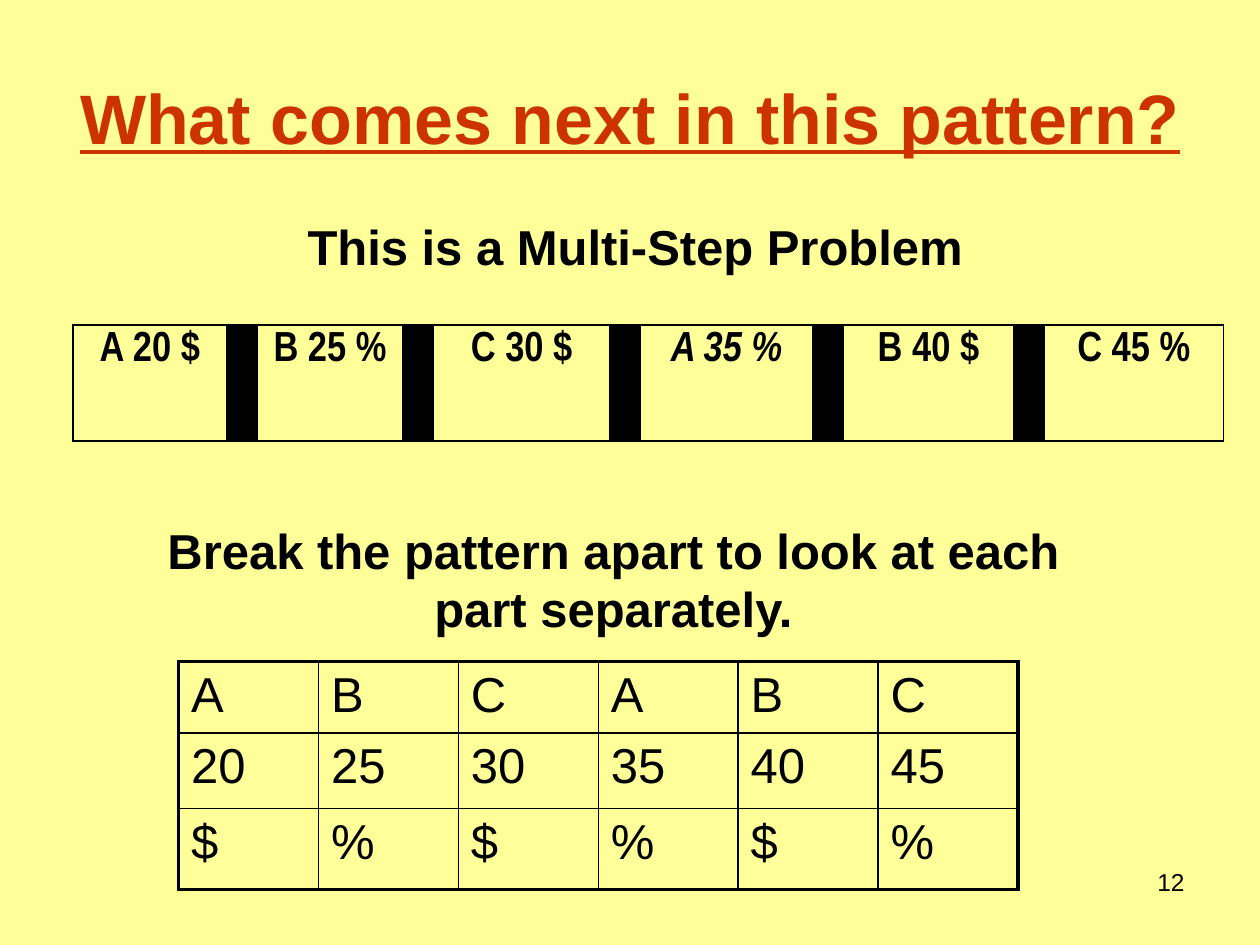
from lxml.etree import SubElement
from pptx import Presentation
from pptx.dml.color import RGBColor
from pptx.enum.text import MSO_ANCHOR, PP_ALIGN
from pptx.oxml.ns import qn
from pptx.util import Cm, Pt

PALE_YELLOW = RGBColor(0xFF, 0xFF, 0x99)
BRICK_RED = RGBColor(0xCC, 0x33, 0x00)
BLACK = RGBColor(0x00, 0x00, 0x00)

LETTERS = ["A", "B", "C", "A", "B", "C"]
NUMBERS = ["20", "25", "30", "35", "40", "45"]
SYMBOLS = ["$", "%", "$", "%", "$", "%"]

THIN, THICK = 1, 2.25


def write(frame, text, size, align=PP_ALIGN.CENTER, font="Arial", color=BLACK,
          bold=False, italic=False, underline=False):
    paragraph = frame.paragraphs[0]
    paragraph.alignment = align
    run = paragraph.add_run()
    run.text = text
    run.font.name = font
    run.font.size = Pt(size)
    run.font.color.rgb = color
    run.font.bold = bold
    run.font.italic = italic
    run.font.underline = underline


def add_text(slide, left, top, width, height, text, size,
             anchor=MSO_ANCHOR.TOP, **style):
    box = slide.shapes.add_textbox(Cm(left), Cm(top), Cm(width), Cm(height))
    box.text_frame.word_wrap = True
    box.text_frame.vertical_anchor = anchor
    write(box.text_frame, text, size, **style)


def add_grid(slide, left, top, widths, heights):
    grid = slide.shapes.add_table(
        len(heights), len(widths), Cm(left), Cm(top),
        Cm(sum(widths)), Cm(sum(heights))).table
    grid.first_row = False
    grid.horz_banding = False
    for column, width in zip(grid.columns, widths):
        column.width = Cm(width)
    for row, height in zip(grid.rows, heights):
        row.height = Cm(height)
    return grid


def style_cell(cell, left=THIN, right=THIN, top=THIN, bottom=THIN, color=None):
    properties = cell._tc.get_or_add_tcPr()
    for side, points in zip("LRTB", (left, right, top, bottom)):
        line = SubElement(properties, qn(f"a:ln{side}"), w=str(Pt(points)))
        fill = SubElement(line, qn("a:solidFill"))
        SubElement(fill, qn("a:srgbClr"), val=str(BLACK))
    if color is None:
        cell.fill.background()
    else:
        cell.fill.solid()
        cell.fill.fore_color.rgb = color


def add_pattern_strip(slide):
    term_widths = [3.1, 2.95, 3.56, 3.48, 3.45, 3.61]
    divider = 0.58
    widths = [term_widths[0]]
    for width in term_widths[1:]:
        widths += [divider, width]
    strip = add_grid(slide, 1.47, 6.55, widths, [2.34])

    # Terms sit in even columns, black dividers in odd ones
    for column in range(len(widths)):
        cell = strip.cell(0, column)
        if column % 2:
            style_cell(cell, color=BLACK)
            continue
        style_cell(cell)
        term = column // 2
        text = f"{LETTERS[term]} {NUMBERS[term]} {SYMBOLS[term]}"
        write(cell.text_frame, text, 24, font="Arial Narrow", bold=True,
              italic=text == "A 35 %")


def add_parts_table(slide):
    parts = [LETTERS, NUMBERS, SYMBOLS]
    last_row, last_column = len(parts) - 1, len(LETTERS) - 1
    table = add_grid(slide, 3.6, 13.34, [2.82] * len(LETTERS),
                     [1.44, 1.52, 1.63])

    # Thick outer frame, thin inner lines
    for r, values in enumerate(parts):
        for c, value in enumerate(values):
            cell = table.cell(r, c)
            style_cell(cell,
                       left=THICK if c == 0 else THIN,
                       right=THICK if c == last_column else THIN,
                       top=THICK if r == 0 else THIN,
                       bottom=THICK if r == last_row else THIN)
            write(cell.text_frame, value, 28, align=PP_ALIGN.LEFT)


def main():
    deck = Presentation()
    deck.slide_width, deck.slide_height = Cm(25.4), Cm(19.05)
    slide = deck.slides.add_slide(deck.slide_layouts[6])
    slide.background.fill.solid()
    slide.background.fill.fore_color.rgb = PALE_YELLOW

    # Title
    add_text(slide, 1.27, 0.76, 22.86, 3.18, "What comes next in this pattern?",
             40, anchor=MSO_ANCHOR.MIDDLE, color=BRICK_RED, bold=True,
             underline=True)

    # Whole pattern
    add_pattern_strip(slide)

    # Pattern split into its parts
    add_text(slide, 2.74, 10.36, 19.25, 2.62,
             "Break the pattern apart to look at each part separately.",
             28, bold=True)
    add_parts_table(slide)

    # Subtitle
    add_text(slide, 3.18, 4.24, 19.25, 1.45, "This is a Multi-Step Problem",
             28, bold=True)

    # Page number
    add_text(slide, 18.21, 17.35, 5.92, 1.32, "12", 14, align=PP_ALIGN.RIGHT)

    deck.save("out.pptx")


if __name__ == "__main__":
    main()
